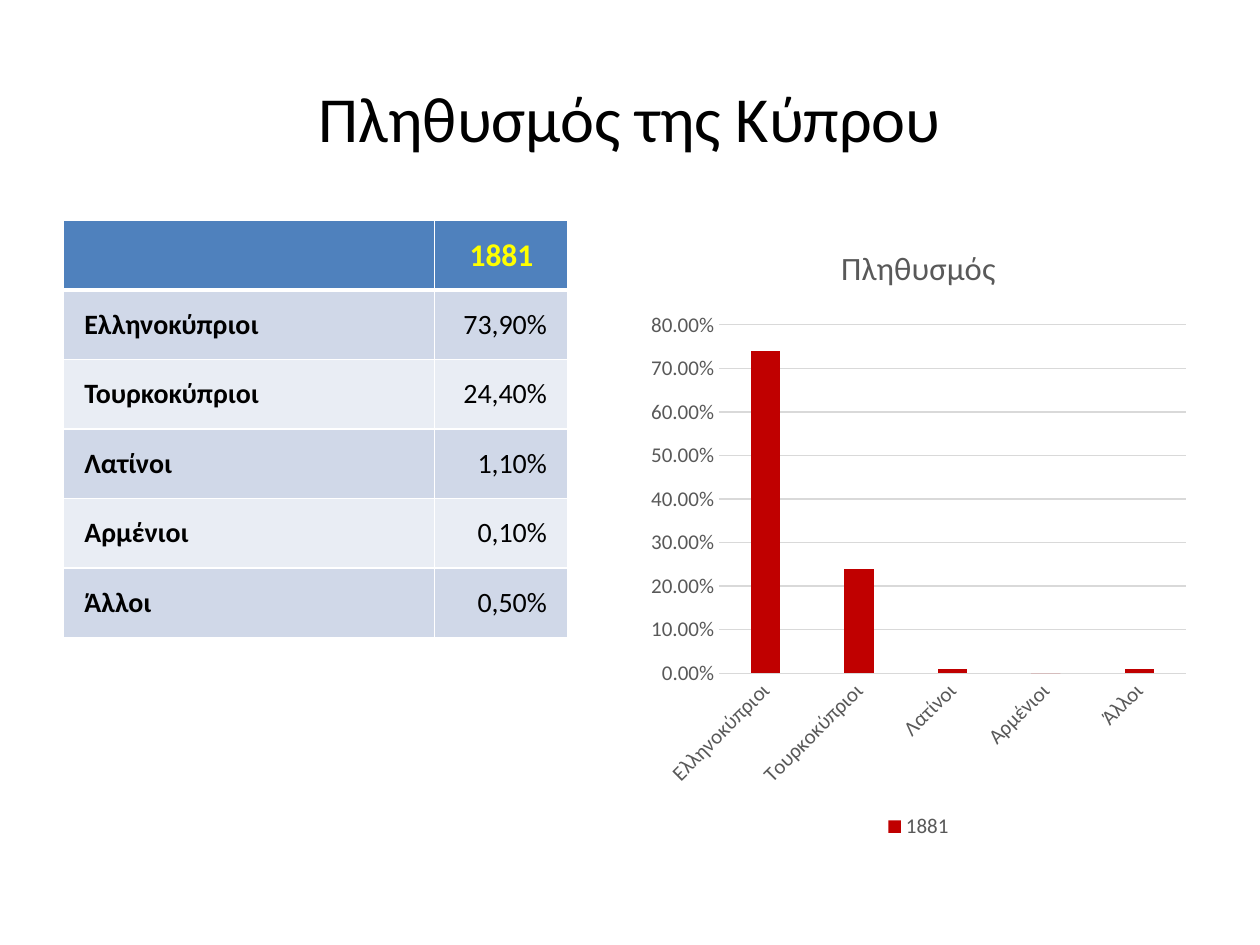
from lxml.etree import SubElement as Sub
from pptx import Presentation
from pptx.chart.data import CategoryChartData as ChartData
from pptx.dml.color import RGBColor as RGB
from pptx.enum.chart import XL_CHART_TYPE as Kind, XL_LEGEND_POSITION as Spot, XL_TICK_MARK as Tick
from pptx.enum.text import MSO_ANCHOR as Anchor, PP_ALIGN as Align
from pptx.oxml.ns import qn
from pptx.util import Inches, Pt

TITLE = "Πληθυσμός της Κύπρου"
HEAD = "Πληθυσμός"
YEAR = "1881"
GROUPS = [
    ("Ελληνοκύπριοι", "73,90%", 0.74),
    ("Τουρκοκύπριοι", "24,40%", 0.24),
    ("Λατίνοι", "1,10%", 0.01),
    ("Αρμένιοι", "0,10%", 0),
    ("Άλλοι", "0,50%", 0.01),
]
COLORS = {
    "text": "000000", "gray": "595959", "grid": "D9D9D9", "bar": "C00000",
    "head": "4F81BD", "year": "FFFF00", "odd": "D0D8E8", "even": "E9EDF4",
    "rule": "FFFFFF",
}
FACE = "Calibri"
WIDTHS = (2.95, 1.06)
HEIGHT = 3.31


def color(name):
    """Return the named colour."""
    return RGB.from_string(COLORS[name])


def style(font, size, name, bold=False):
    """Set face, size, colour and weight of a font."""
    font.name, font.size, font.bold = FACE, Pt(size), bold
    font.color.rgb = color(name)


def add_title(slide):
    """Fill and place the title."""
    title = slide.shapes.title
    title.left, title.top = Inches(0.5), Inches(0.3)
    title.width, title.height = Inches(9), Inches(1.25)
    frame = title.text_frame
    frame.text, frame.vertical_anchor = TITLE, Anchor.MIDDLE
    para = frame.paragraphs[0]
    para.alignment = Align.CENTER
    style(para.font, 36.7, "text")


def set_rules(cell, foot):
    """Draw the four white borders, the lower one with its own width."""
    props = cell._tc.get_or_add_tcPr()
    for spot, (side, width) in enumerate((("L", 1), ("R", 1), ("T", 1), ("B", foot))):
        line = Sub(props, qn(f"a:ln{side}"), w=str(Pt(width)))
        fill = Sub(line, qn("a:solidFill"))
        Sub(fill, qn("a:srgbClr"), val=COLORS["rule"])
        props.insert(spot, line)


def fill_cell(cell, text, fill, align, size, ink, bold, foot=1):
    """Write and format one table cell."""
    cell.fill.solid()
    cell.fill.fore_color.rgb = color(fill)
    set_rules(cell, foot)
    cell.vertical_anchor = Anchor.MIDDLE
    cell.margin_left = cell.margin_right = Inches(0.17)
    cell.text = text
    para = cell.text_frame.paragraphs[0]
    para.alignment = align
    style(para.font, size, ink, bold)


def add_table(slide):
    """Build the table of shares."""
    table = slide.shapes.add_table(
        len(GROUPS) + 1, 2, Inches(0.5), Inches(1.75), Inches(sum(WIDTHS)), Inches(HEIGHT)
    ).table
    for col, width in zip(table.columns, WIDTHS):
        col.width = Inches(width)
    for col, text in enumerate(("", YEAR)):
        fill_cell(table.cell(0, col), text, "head", Align.CENTER, 18, "year", True, 3)
    for row, (name, share, _) in enumerate(GROUPS, 1):
        band = "odd" if row % 2 else "even"
        fill_cell(table.cell(row, 0), name, band, Align.LEFT, 16, "text", True)
        fill_cell(table.cell(row, 1), share, band, Align.RIGHT, 16, "text", False)


def add_chart(slide):
    """Build the column chart of shares."""
    data = ChartData(number_format="0.00%")
    data.categories = [name for name, _, _ in GROUPS]
    data.add_series(YEAR, [value for _, _, value in GROUPS])
    chart = slide.shapes.add_chart(
        Kind.COLUMN_CLUSTERED, Inches(5.08), Inches(1.75), Inches(4.42), Inches(4.95), data
    ).chart
    style(chart.font, 10, "text")
    chart.has_title = True
    frame = chart.chart_title.text_frame
    frame.text = HEAD
    style(frame.paragraphs[0].font, 18.6, "gray")
    chart.chart_title.include_in_layout = False

    chart.has_legend = True
    chart.legend.position = Spot.BOTTOM
    chart.legend.include_in_layout = False
    style(chart.legend.font, 12, "gray")

    plot = chart.plots[0]
    plot.gap_width, plot.overlap, plot.vary_by_categories = 219, -27, False
    bars = plot.series[0]
    bars.invert_if_negative = False
    bars.format.fill.solid()
    bars.format.fill.fore_color.rgb = color("bar")

    cats, vals = chart.category_axis, chart.value_axis
    for axis in (cats, vals):
        axis.major_tick_mark = axis.minor_tick_mark = Tick.NONE
        style(axis.tick_labels.font, 12, "gray")
    cats.tick_labels.font._element.getparent().getparent().getparent().bodyPr.set("rot", "-2700000")
    vals.format.line.fill.background()
    vals.minimum_scale, vals.maximum_scale, vals.major_unit = 0, 0.8, 0.1
    vals.tick_labels.number_format = "0.00%"
    vals.tick_labels.number_format_is_linked = False
    for line in (cats.format.line, vals.major_gridlines.format.line):
        line.color.rgb, line.width = color("grid"), Pt(0.75)


def main():
    """Build and save the slide."""
    deck = Presentation()
    deck.slide_width, deck.slide_height = Inches(10), Inches(7.5)
    slide = deck.slides.add_slide(deck.slide_layouts[5])
    add_title(slide)
    add_table(slide)
    add_chart(slide)
    deck.save("out.pptx")


if __name__ == "__main__":
    main()
